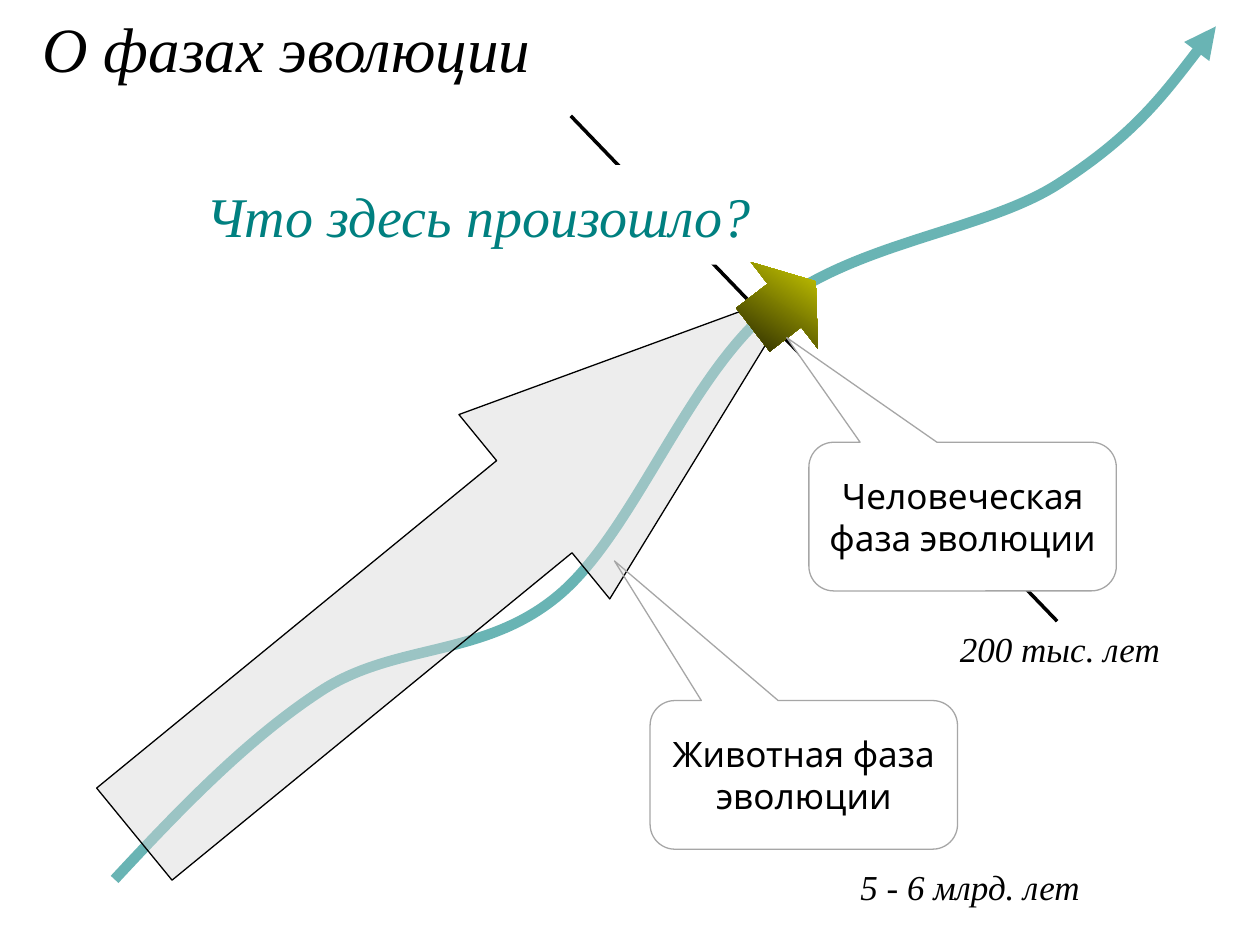
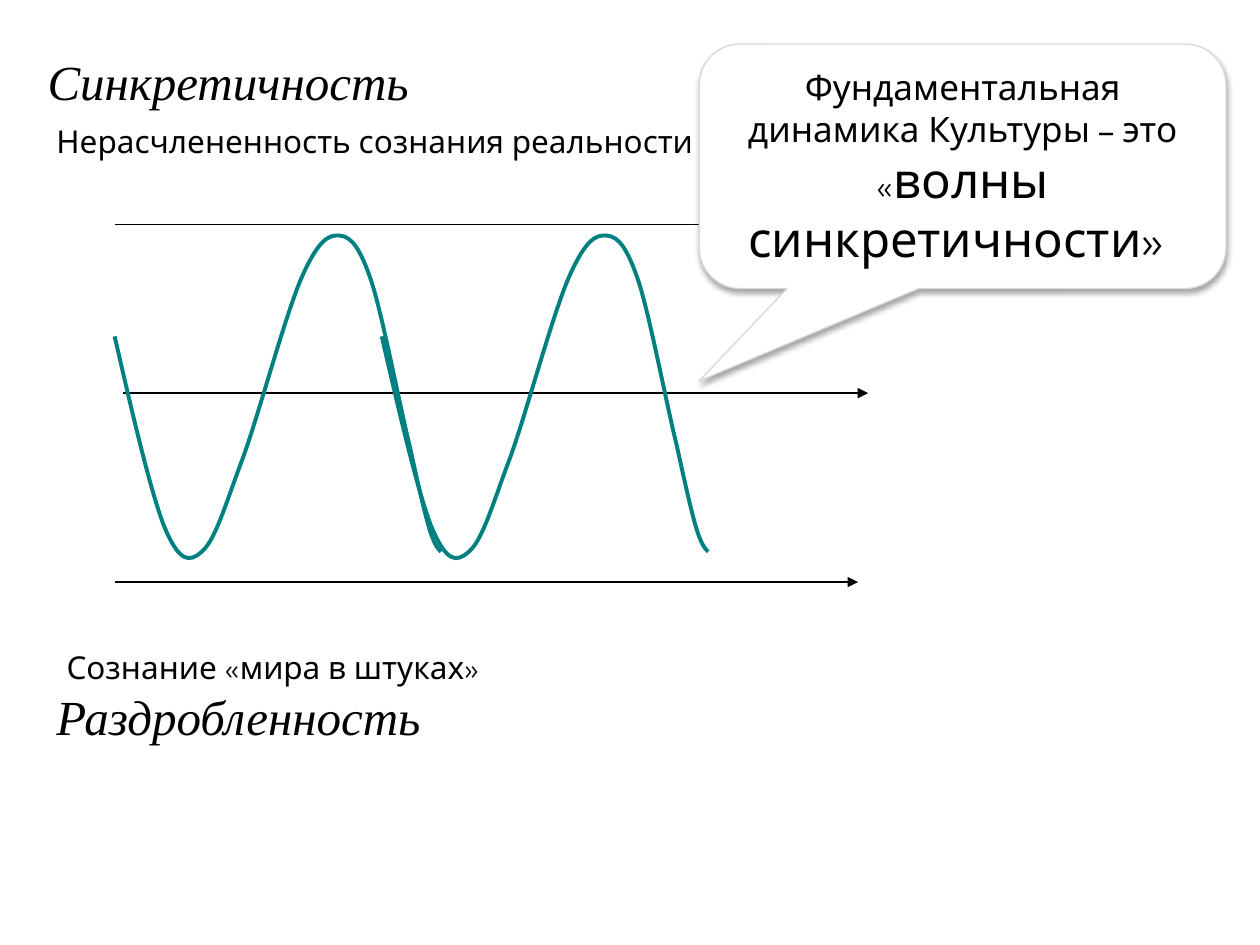
from typing import NamedTuple

from lxml.etree import SubElement
from pptx import Presentation
from pptx.dml.color import RGBColor
from pptx.enum.shapes import MSO_CONNECTOR, MSO_SHAPE as Kind
from pptx.enum.text import MSO_ANCHOR as Anchor, PP_ALIGN as Align
from pptx.oxml.ns import qn
from pptx.util import Emu, Pt

PX = 9144  # one hundredth of an inch
SERIF, SANS = "Times New Roman", "League Spartan"
BLACK, WHITE, TEAL = "000000", "FFFFFF", "008080"
GREY, PALE = "A6A6A6", "D9D9D9"


class Box(NamedTuple):
    left: int
    top: int
    width: int
    height: int


class Font(NamedTuple):
    name: str
    size: int
    italic: bool = False
    color: str = BLACK


class Label(NamedTuple):
    box: Box
    text: str
    font: Font
    after: int = 0


class Line(NamedTuple):
    start: tuple[int, int]
    end: tuple[int, int]
    width: float
    arrow: bool = True


class Callout(NamedTuple):
    box: Box
    tip: tuple[float, float]
    runs: list[tuple[str, int]]
    fill: str | None = WHITE
    edge: str = GREY


HEAD, BODY = Font(SERIF, 28, True), Font(SANS, 18)
DATE = Font(SERIF, 20, True)

GROWTH = [
    (91, 698), (144, 641), (198, 585), (257, 547), (316, 510), (385, 522),
    (444, 472), (503, 422), (545, 301), (611, 246), (677, 192), (781, 184),
    (840, 146), (899, 108), (932, 65), (965, 21),
]
WAVE = [
    (91, 267), (105, 328), (119, 388), (130, 417), (142, 446), (150, 447),
    (160, 438), (171, 429), (179, 400), (193, 363), (206, 327), (227, 248),
    (240, 219), (253, 190), (261, 186), (270, 187), (279, 188), (286, 197),
    (295, 224), (304, 252), (317, 321), (325, 353), (332, 385), (336, 403),
    (340, 417), (344, 431), (347, 435), (350, 438),
]
PERIOD = 212

DATES = [
    Label(Box(673, 682, 276, 44), "5 - 6 млрд. лет", DATE),
    Label(Box(752, 493, 220, 44), "200 тыс. лет", DATE),
]
AXES = [
    Line((98, 312), (689, 312), 1),
    Line((91, 178), (681, 178), 0.75),
    Line((91, 462), (681, 462), 0.75),
]
POLES = [
    Label(Box(35, 92, 843, 40), "Нерасчлененность сознания реальности", BODY, 12),
    Label(Box(43, 509, 843, 40), "Сознание «мира в штуках»", BODY, 12),
    Label(Box(28, 36, 850, 57), "Синкретичность", HEAD, 12),
    Label(Box(35, 540, 850, 57), "Раздробленность", HEAD, 12),
]
ANIMAL = Callout(Box(516, 556, 244, 118), (-0.616, -1.439),
                 [("Животная фаза эволюции", 20)], None)
HUMAN = Callout(Box(642, 351, 244, 118), (-0.572, -1.204),
                [("Человеческая фаза эволюции", 20)])
CULTURE = Callout(Box(555, 35, 418, 194), (-0.5, 0.878),
                  [("Фундаментальная динамика Культуры – это «", 20),
                   ("волны синкретичности» ", 28)], edge=PALE)


def px(*sizes: int) -> list[Emu]:
    return [Emu(size * PX) for size in sizes]


def rgb(code: str) -> RGBColor:
    return RGBColor.from_string(code)


def fade(node, percent: int) -> None:
    """Set the opacity of the first colour found under node."""
    color = next(node.iter(qn("a:srgbClr")))
    SubElement(color, qn("a:alpha"), val=str(percent * 1000))


def stroke(shape, color: str, width: float, arrow: bool = False) -> None:
    shape.line.color.rgb = rgb(color)
    shape.line.width = Pt(width)
    if arrow:
        line = shape.line._get_or_add_ln()
        SubElement(line, qn("a:tailEnd"), type="triangle")


def style(font, look: Font) -> None:
    font.name, font.size = look.name, Pt(look.size)
    font.italic = look.italic
    font.color.rgb = rgb(look.color)


def write(shape, text: str, look: Font, after: int = 0) -> None:
    frame = shape.text_frame
    frame.word_wrap = True
    para = frame.paragraphs[0]
    para.text, para.alignment = text, Align.LEFT
    para.space_after = Pt(after)
    style(para.font, look)


def add_label(slide, label: Label) -> None:
    shape = slide.shapes.add_textbox(*px(*label.box))
    write(shape, label.text, label.font, label.after)


def add_form(slide, kind: Kind, box: Box, adjust: tuple = (), turn: float = 0):
    """Add a preset shape without shadow or outline."""
    shape = slide.shapes.add_shape(kind, *px(*box))
    shape.shadow.inherit = False
    shape.line.fill.background()
    shape.rotation = turn
    for index, value in enumerate(adjust):
        shape.adjustments[index] = value
    return shape


def paint(shape, color: str) -> None:
    shape.fill.solid()
    shape.fill.fore_color.rgb = rgb(color)


def add_line(slide, line: Line) -> None:
    ends = px(*line.start, *line.end)
    shape = slide.shapes.add_connector(MSO_CONNECTOR.STRAIGHT, *ends)
    stroke(shape, BLACK, line.width, line.arrow)
    SubElement(shape._element.spPr, qn("a:effectLst"))


def add_curve(slide, points: list[tuple[int, int]], width: float,
              arrow: bool = False):
    """Draw a chain of Bezier arcs: a start, then three points an arc."""
    build = slide.shapes.build_freeform(*points[0], scale=PX)
    build.add_line_segments(points[1:], close=False)
    shape = build.convert_to_shape()
    shape.shadow.inherit = False
    shape.fill.background()
    stroke(shape, TEAL, width, arrow)
    track = next(shape._element.iter(qn("a:path")))
    steps = track.findall(qn("a:lnTo"))
    for first in range(0, len(steps), 3):
        arc = SubElement(track, qn("a:cubicBezTo"))
        for step in steps[first:first + 3]:
            arc.append(step[0])
            track.remove(step)
    return shape


def add_callout(slide, note: Callout):
    shape = add_form(slide, Kind.ROUNDED_RECTANGULAR_CALLOUT, note.box,
                     (*note.tip, 0.167))
    if note.fill:
        paint(shape, note.fill)
    else:
        shape.fill.background()
    stroke(shape, note.edge, 0.75)
    frame = shape.text_frame
    frame.word_wrap, frame.vertical_anchor = True, Anchor.MIDDLE
    para = frame.paragraphs[0]
    para.alignment = Align.CENTER
    style(para.font, Font(SANS, note.runs[0][1]))
    for text, size in note.runs:
        run = para.add_run()
        run.text = text
        style(run.font, Font(SANS, size))
    return shape


def cast(shape) -> None:
    """Give the shape a soft shadow straight below."""
    effects = shape._element.spPr.find(qn("a:effectLst"))
    shade = SubElement(effects, qn("a:outerShdw"), blurRad=str(Pt(3.1)),
                       dist=str(Pt(1.8)), dir="5400000", rotWithShape="0")
    SubElement(shade, qn("a:srgbClr"), val=BLACK)
    fade(shade, 35)


def draw_phases(slide) -> None:
    add_label(slide, Label(Box(24, 3, 689, 71), "О фазах эволюции",
                           Font(SERIF, 36, True), 6))
    curve = add_curve(slide, GROWTH, 6, arrow=True)
    fade(curve.line._get_or_add_ln(), 58)
    add_line(slide, Line((453, 92), (839, 493), 2, False))

    query = add_form(slide, Kind.RECTANGLE, Box(154, 131, 472, 79))
    paint(query, WHITE)
    query.text_frame.vertical_anchor = Anchor.MIDDLE
    write(query, "Что здесь произошло?", Font(SERIF, 32, True, TEAL))

    past = add_form(slide, Kind.UP_ARROW, Box(276, 105, 189, 682),
                    (0.5, 1.438), 50.7)
    paint(past, PALE)
    fade(past._element.spPr, 45)
    stroke(past, BLACK, 0.75)
    add_callout(slide, ANIMAL)

    leap = add_form(slide, Kind.UP_ARROW, Box(579, 211, 87, 63),
                    (0.5, 0.499), 52.3)
    leap.fill.gradient()
    leap.fill.gradient_angle = 290
    for stop, color in zip(leap.fill.gradient_stops, ("FFFF00", BLACK)):
        stop.color.rgb = rgb(color)
    add_callout(slide, HUMAN)
    for date in DATES:
        add_label(slide, date)


def draw_waves(slide) -> None:
    for axis in AXES:
        add_line(slide, axis)
    for shift in (0, PERIOD):
        add_curve(slide, [(x + shift, y) for x, y in WAVE], 2.25)
    for pole in POLES:
        add_label(slide, pole)
    cast(add_callout(slide, CULTURE))


def main() -> None:
    deck = Presentation()
    deck.slide_width, deck.slide_height = px(1000, 750)
    for draw in (draw_phases, draw_waves):
        draw(deck.slides.add_slide(deck.slide_layouts[6]))
    deck.save("out.pptx")


if __name__ == "__main__":
    main()
